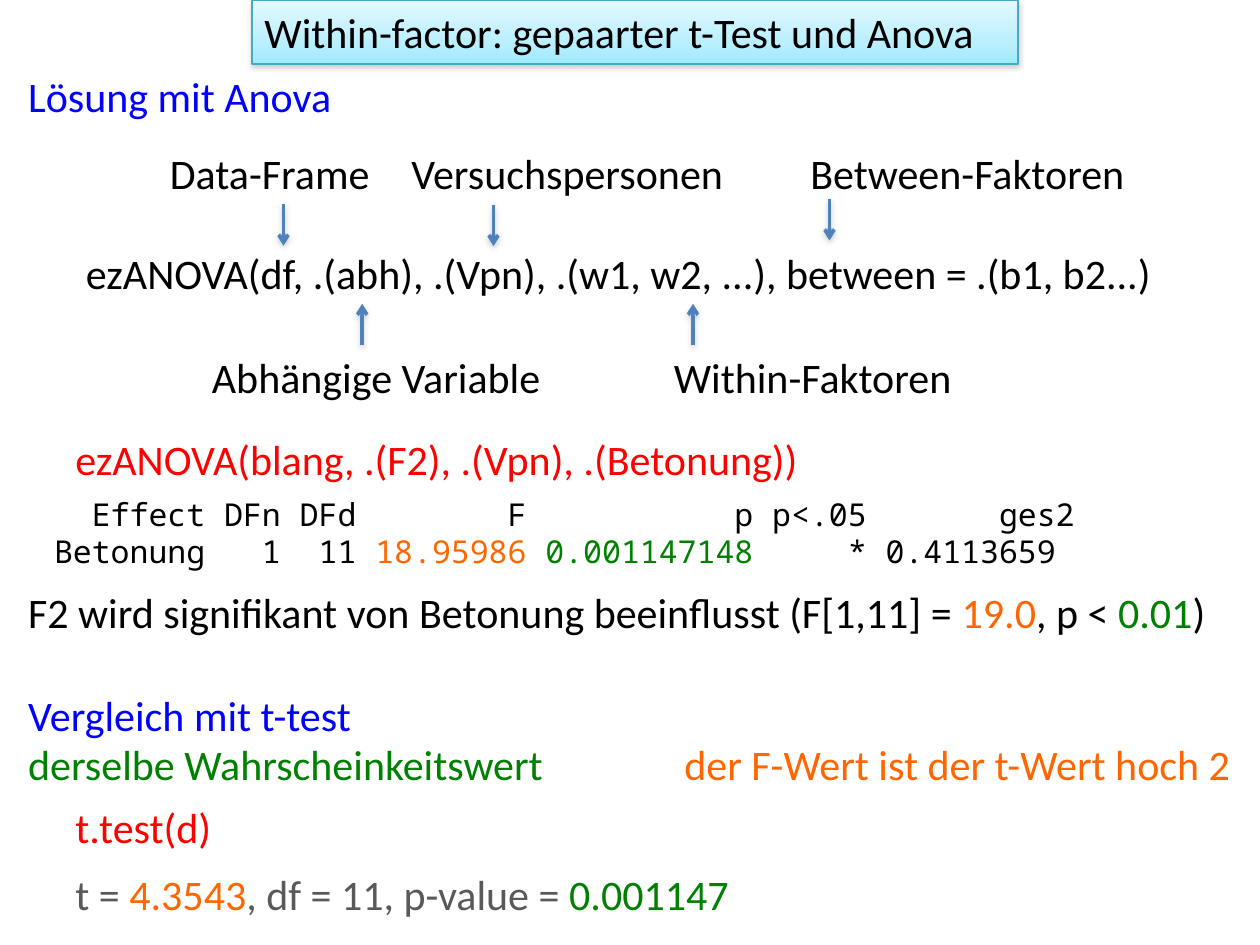
from copy import deepcopy
from lxml.etree import SubElement
from pptx import Presentation
from pptx.dml.color import RGBColor
from pptx.enum.shapes import MSO_CONNECTOR, MSO_SHAPE
from pptx.enum.text import MSO_ANCHOR, MSO_AUTO_SIZE, PP_ALIGN
from pptx.oxml import parse_xml
from pptx.oxml.ns import qn
from pptx.util import Pt

BLACK, BLUE, RED = "000000", "0000FF", "FF0000"
GREEN, ORANGE, GRAY = "008000", "FF6600", "595959"
SHADE = (
    '<a:effectLst xmlns:a="http://schemas.openxmlformats.org/drawingml/2006/main">'
    '<a:outerShdw blurRad="40000" dist="20000" dir="5400000" rotWithShape="0">'
    '<a:srgbClr val="808080"><a:alpha val="38000"/></a:srgbClr>'
    "</a:outerShdw></a:effectLst>"
)
BODY = {"word_wrap": True, "auto_size": MSO_AUTO_SIZE.SHAPE_TO_FIT_TEXT,
        "vertical_anchor": MSO_ANCHOR.TOP}
SANS = {"name": "Calibri", "size": Pt(24)}
MONO = {"name": "Noto Sans Mono", "size": Pt(18)}


def color(code):
    return RGBColor.from_string(code)


def write(frame, rows, font):
    for key, val in BODY.items():
        setattr(frame, key, val)
    for num, row in enumerate(rows):
        para = frame.add_paragraph() if num else frame.paragraphs[0]
        para.alignment = PP_ALIGN.LEFT
        for text, code in row:
            run = para.add_run()
            run.text = text
            for key, val in font.items():
                setattr(run.font, key, val)
            run.font.color.rgb = color(code)


deck = Presentation()
deck.slide_width, deck.slide_height = Pt(720), Pt(540)
slide = deck.slides.add_slide(deck.slide_layouts[6])
shapes = slide.shapes

title = shapes.add_shape(MSO_SHAPE.RECTANGLE, Pt(144), Pt(0), Pt(437.8), Pt(36.6))
title.fill.gradient()
title.fill.gradient_angle = 270
stops = title.fill.gradient_stops
last = title._element.spPr.find(".//" + qn("a:gs") + "[2]")
last.addprevious(deepcopy(last))
stops = title.fill.gradient_stops
for stop, (place, code) in zip(stops, [(0, "E4F9FF"), (0.65, "BBEFFF"), (1, "9EEAFF")]):
    stop.position = place
    stop.color.rgb = color(code)
title.line.color.rgb = color("46AAC5")
title.line.width = Pt(0.75)
title._element.spPr.append(parse_xml(SHADE))
write(title.text_frame, [[("Within-factor: gepaarter t-Test und Anova", BLACK)]], SANS)

notes = [
    (9, 36.6, 198, [("Lösung mit Anova", BLUE)]),
    (90, 80.9, 150, [("Data-Frame", BLACK)]),
    (228, 80.9, 210, [("Versuchspersonen", BLACK)]),
    (456, 80.9, 222, [("Between-Faktoren", BLACK)]),
    (42, 137.6, 636,
     [("ezANOVA(df, .(abh), .(Vpn), .(w1, w2, ...), between = .(b1, b2...)", BLACK)]),
    (114, 197.2, 204, [("Abhängige Variable", BLACK)]),
    (378, 197.2, 186, [("Within-Faktoren", BLACK)]),
    (36, 243.9, 564, [("ezANOVA(blang, .(F2), .(Vpn), .(Betonung))", RED)]),
    (9, 331.4, 726,
     [("F2 wird signifikant von Betonung beeinflusst (F[1,11] = ", BLACK),
      ("19.0", ORANGE), (", p < ", BLACK), ("0.01", GREEN), (")", BLACK)]),
    (9, 390.2, 312, [("Vergleich mit t-test", BLUE)]),
    (9, 418.5, 351, [("derselbe Wahrscheinkeitswert", GREEN)]),
    (384, 418.5, 336, [("der F-Wert ist der t-Wert hoch 2", ORANGE)]),
    (36, 454.6, 198, [("t.test(d)", RED)]),
    (36, 492.8, 450,
     [("t = ", GRAY), ("4.3543", ORANGE), (", df = 11, p-value = ", GRAY),
      ("0.001147", GREEN)]),
]
for left, top, width, runs in notes:
    box = shapes.add_textbox(Pt(left), Pt(top), Pt(width), Pt(36.6))
    write(box.text_frame, [runs], SANS)

table = shapes.add_textbox(Pt(23.8), Pt(280.1), Pt(618), Pt(51.1))
write(table.text_frame, [
    [("\tEffect\tDFn\tDFd\tF\tp\tp<.05\tges2", BLACK)],
    [("Betonung\t1\t11", BLACK), ("\t18.95986", ORANGE),
     ("\t0.001147148", GREEN), ("\t*\t0.4113659", BLACK)],
], MONO)
ends = [12, 16, 25, 37, 43]
for para, cols in zip(table.text_frame.paragraphs, [[8, *ends, 54], [*ends, 53]]):
    para.line_spacing = Pt(21)
    tabs = SubElement(para._p.get_or_add_pPr(), qn("a:tabLst"))
    for col in cols:
        SubElement(tabs, qn("a:tab"), pos=str(Pt(col * 10.8)), algn="r")

arrows = [(162, 116.8, 140.4), (282, 117, 140.6), (474, 113.8, 137.4),
          (207, 197.2, 173.6), (396, 197.2, 173.6)]
for left, start, end in arrows:
    arrow = shapes.add_connector(MSO_CONNECTOR.STRAIGHT, Pt(left), Pt(start), Pt(left), Pt(end))
    arrow.line.color.rgb = color("4F81BD")
    arrow.line.width = Pt(2)
    SubElement(arrow.line._get_or_add_ln(), qn("a:tailEnd"), type="arrow")
    arrow._element.spPr.append(parse_xml(SHADE))

deck.save("out.pptx")
